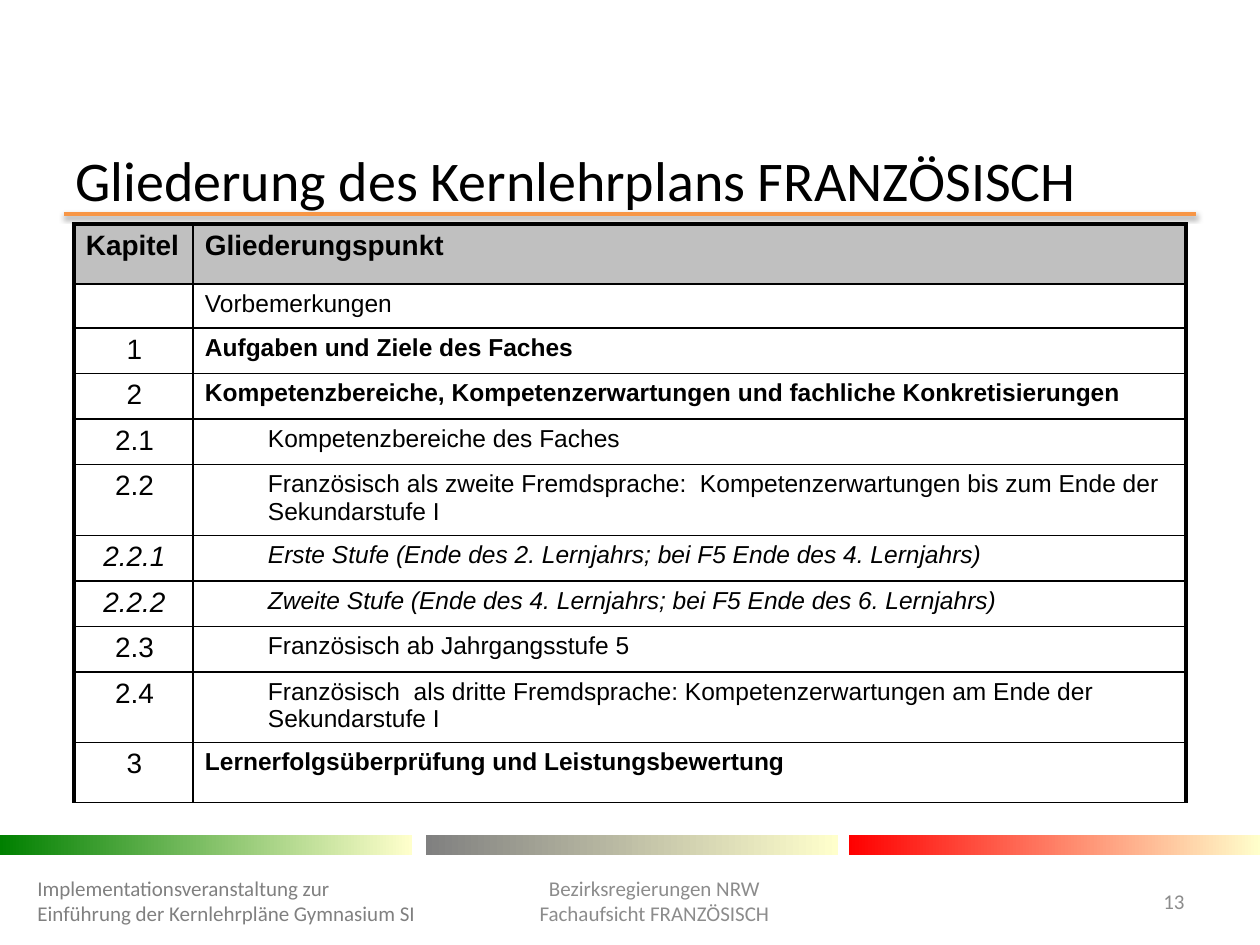
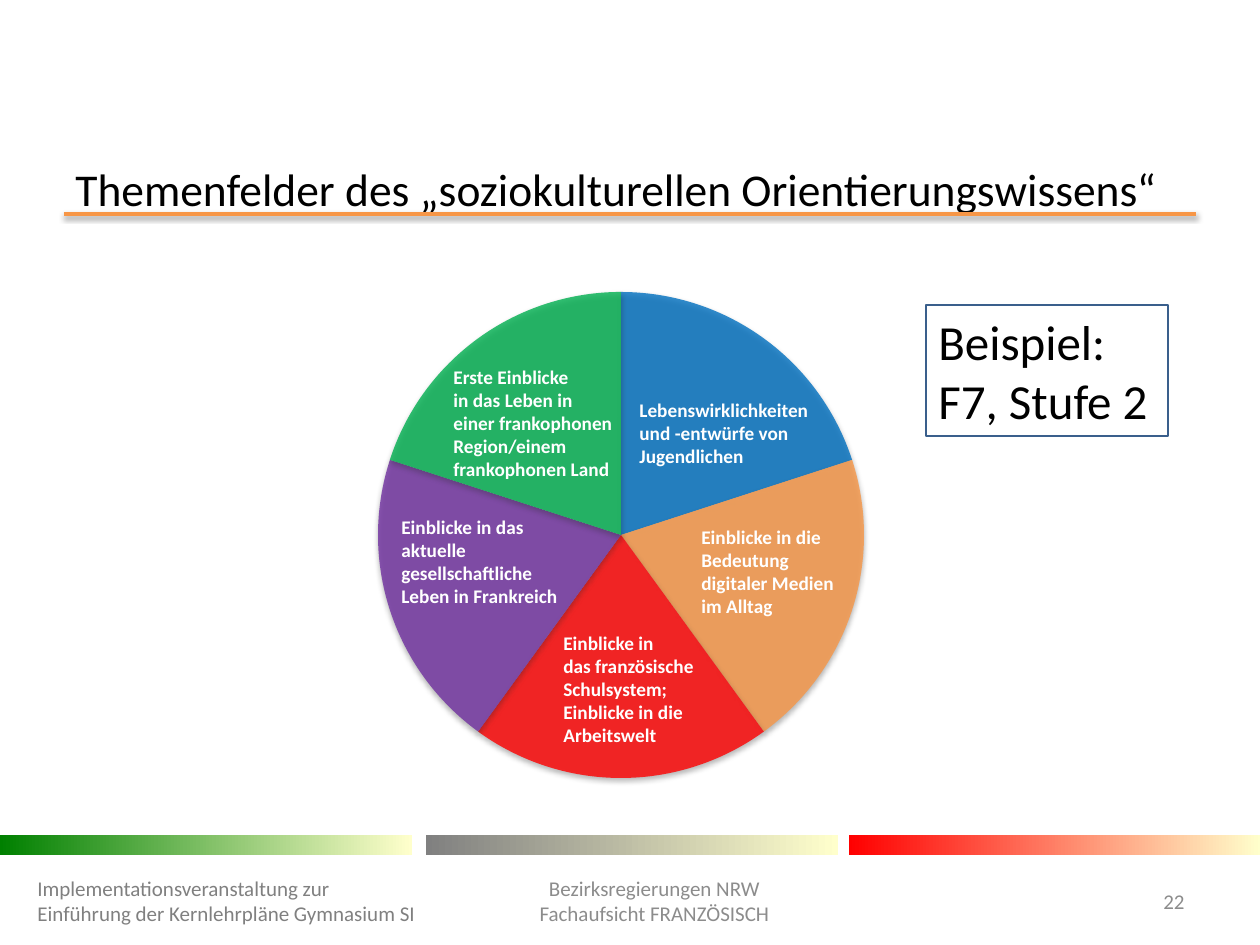
from lxml import etree
from pptx import Presentation
from pptx import util as u
from pptx.dml.color import RGBColor
from pptx.enum import shapes, text
from pptx.oxml.ns import qn

PX = 914400 / 126
COLORS = {
    "black": "000000", "white": "FFFFFF", "rule": "F79646", "header": "C0C0C0",
    "band_end": "FFFFCC", "green": "008000", "grey": "808080", "red": "FF0000",
    "footer": "8C8C8C", "frame": "3A5F8C", "blue_field": "0070C0",
    "orange_field": "F79646", "purple_field": "7030A0", "green_field": "00B050",
}
ALIGN = text.PP_ALIGN
ANCHOR = text.MSO_ANCHOR

BAND_STARTS = [(0, "green"), (426, "grey"), (849, "red")]
BAND_WIDTH = 412

CHAPTER = {"bold": True}
SECTION = {"indent": 63}
SUBSECTION = {"indent": 63, "italic": True}
OUTLINE = [
    ("Kapitel", "Gliederungspunkt", 60, CHAPTER),
    ("", "Vorbemerkungen", 44, {}),
    ("1", "Aufgaben und Ziele des Faches", 44, CHAPTER),
    ("2", "Kompetenzbereiche, Kompetenzerwartungen und fachliche Konkretisierungen",
     44, CHAPTER),
    ("2.1", "Kompetenzbereiche des Faches", 44, SECTION),
    ("2.2", "Französisch als zweite Fremdsprache:  Kompetenzerwartungen bis zum "
     "Ende der Sekundarstufe I", 68, SECTION),
    ("2.2.1", "Erste Stufe (Ende des 2. Lernjahrs; bei F5 Ende des 4. Lernjahrs)",
     44, SUBSECTION),
    ("2.2.2", "Zweite Stufe (Ende des 4. Lernjahrs; bei F5 Ende des 6. Lernjahrs)",
     44, SUBSECTION),
    ("2.3", "Französisch ab Jahrgangsstufe 5", 44, SECTION),
    ("2.4", "Französisch  als dritte Fremdsprache: Kompetenzerwartungen am Ende "
     "der Sekundarstufe I", 68, SECTION),
    ("3", "Lernerfolgsüberprüfung und Leistungsbewertung", 60, CHAPTER),
]

# Colour, label box relative to the circle, label paragraphs; clockwise from the top
TOPICS = [
    ("blue_field", (249, 100, 208, 83),
     ["Lebenswirklichkeiten", "und -entwürfe von Jugendlichen"]),
    ("orange_field", (311, 227, 162, 106),
     ["Einblicke in die", "Bedeutung", "digitaler Medien", "im Alltag"]),
    ("red", (173, 333, 238, 130),
     ["Einblicke in", "das französische", "Schulsystem;",
      "Einblicke in die Arbeitswelt"]),
    ("purple_field", (11, 217, 189, 106),
     ["Einblicke in das aktuelle gesellschaftliche Leben in Frankreich"]),
    ("green_field", (63, 67, 208, 130),
     ["Erste Einblicke", "in das Leben in", "einer frankophonen",
      "Region/einem frankophonen Land"]),
]


def px(length):
    return u.Emu(round(length * PX))


def place(box):
    return [px(length) for length in box]


def rgb(name):
    return RGBColor.from_string(COLORS[name])


def write(frame, lines, size, color, align=ALIGN.LEFT, font="Calibri", **style):
    """Fill a text frame with one paragraph per line."""
    frame.word_wrap = True
    for number, line in enumerate(lines):
        paragraph = frame.paragraphs[0] if number == 0 else frame.add_paragraph()
        paragraph.text = line
        paragraph.alignment = align
        for run in paragraph.runs:
            values = {"name": font, "size": u.Pt(size), **style}
            for attribute, value in values.items():
                setattr(run.font, attribute, value)
            run.font.color.rgb = rgb(color)


def add_text(slide, box, lines, size, color, anchor=ANCHOR.TOP, **style):
    frame = slide.shapes.add_textbox(*place(box)).text_frame
    frame.vertical_anchor = anchor
    write(frame, lines, size, color, **style)


def cast_shadow(shape, distance, opacity):
    """Give a shape a soft shadow straight below it."""
    effects = etree.SubElement(shape.element.spPr, qn("a:effectLst"))
    shadow = etree.SubElement(effects, qn("a:outerShdw"), blurRad="40000",
                              dist=str(distance), dir="5400000", rotWithShape="0")
    color = etree.SubElement(shadow, qn("a:srgbClr"), val=COLORS["black"])
    etree.SubElement(color, qn("a:alpha"), val=str(opacity * 1000))


def add_title(slide, title, top, size):
    add_text(slide, (63, top, 1134, 49), [title], size, "black", ANCHOR.MIDDLE)
    rule = slide.shapes.add_connector(
        shapes.MSO_CONNECTOR.STRAIGHT, px(64), px(214), px(1196), px(214))
    rule.line.color.rgb = rgb("rule")
    rule.line.width = u.Pt(2)
    cast_shadow(rule, 20000, 38)


def add_bands(slide, top, height):
    for left, color in BAND_STARTS:
        band = slide.shapes.add_shape(
            shapes.MSO_SHAPE.RECTANGLE, *place((left, top, BAND_WIDTH, height)))
        band.shadow.inherit = False
        band.line.fill.background()
        band.fill.gradient()
        band.fill.gradient_angle = 0
        for stop, name in zip(band.fill.gradient_stops, (color, "band_end")):
            stop.color.rgb = rgb(name)


def add_footer(slide, number):
    add_text(slide, (25, 876, 417, 50),
             ["Implementationsveranstaltung zur\vEinführung der Kernlehrpläne Gymnasium SI"],
             12, "grey", ANCHOR.MIDDLE)
    add_text(slide, (471, 856, 367, 89),
             ["Bezirksregierungen NRW", "Fachaufsicht FRANZÖSISCH"],
             12, "footer", ANCHOR.MIDDLE, align=ALIGN.CENTER)
    add_text(slide, (1116, 876, 81, 50), [str(number)],
             12, "footer", ANCHOR.MIDDLE, align=ALIGN.RIGHT)


def add_framed_slide(deck, title, title_top, title_size, number):
    slide = deck.slides.add_slide(deck.slide_layouts[6])
    add_bands(slide, 835, 20)
    add_title(slide, title, title_top, title_size)
    add_footer(slide, number)
    return slide


def set_borders(cell, widths):
    """Draw black cell borders; widths in points by side, in schema order."""
    for side, width in widths.items():
        border = etree.SubElement(cell._tc.get_or_add_tcPr(), qn(f"a:ln{side}"),
                                  w=str(u.Pt(width)))
        fill = etree.SubElement(border, qn("a:solidFill"))
        etree.SubElement(fill, qn("a:srgbClr"), val=COLORS["black"])


def format_cell(cell, is_header, is_chapter_column):
    margins = {"margin_left": 12, "margin_right": 10,
               "margin_top": 6, "margin_bottom": 6}
    for attribute, value in margins.items():
        setattr(cell, attribute, px(value))
    set_borders(cell, {"L": 2.25 if is_chapter_column else 1,
                       "R": 1 if is_chapter_column else 2.25,
                       "T": 2.25 if is_header else 1, "B": 1})
    if is_header:
        cell.fill.solid()
        cell.fill.fore_color.rgb = rgb("header")
    else:
        cell.fill.background()


def add_outline_table(slide, left, top, column_widths):
    height = sum(entry[2] for entry in OUTLINE)
    table = slide.shapes.add_table(
        len(OUTLINE), 2, *place((left, top, sum(column_widths), height))).table
    table.first_row = table.horz_banding = False
    for column, width in zip(table.columns, column_widths):
        column.width = px(width)
    for index, (chapter, topic, row_height, style) in enumerate(OUTLINE):
        is_header = index == 0
        table.rows[index].height = px(row_height)
        chapter_cell, topic_cell = table.cell(index, 0), table.cell(index, 1)
        format_cell(chapter_cell, is_header, True)
        format_cell(topic_cell, is_header, False)
        italic = style.get("italic", False)
        write(chapter_cell.text_frame, [chapter], 16, "black", font="Arial",
              align=ALIGN.LEFT if is_header else ALIGN.CENTER,
              bold=is_header, italic=italic)
        write(topic_cell.text_frame, [topic], 16 if is_header else 14, "black",
              font="Arial", bold=style.get("bold", False), italic=italic)
        if not chapter:
            etree.SubElement(chapter_cell.text_frame.paragraphs[0]._p,
                             qn("a:endParaRPr"), sz="1400")
        if "indent" in style:
            properties = topic_cell.text_frame.paragraphs[0]._p.get_or_add_pPr()
            properties.set("marL", str(px(style["indent"])))


def add_topic_wheel(slide, left, top, diameter):
    full_turn, start = 216, 162  # adjustment units: 0.6 per degree
    step = full_turn / len(TOPICS)
    for index, (color, _, _) in enumerate(TOPICS):
        sector = slide.shapes.add_shape(
            shapes.MSO_SHAPE.PIE, *place((left, top, diameter, diameter)))
        for edge in (0, 1):
            sector.adjustments[edge] = (start + (index + edge) * step) % full_turn
        sector.fill.solid()
        sector.fill.fore_color.rgb = rgb(color)
        fill_color = sector.element.spPr.find(f".//{qn('a:srgbClr')}")
        etree.SubElement(fill_color, qn("a:alpha"), val="80000")
        sector.line.fill.background()
        cast_shadow(sector, 23000, 35)
    for _, (x, y, width, height), lines in TOPICS:
        add_text(slide, (left + x, top + y, width, height), lines, 11, "white",
                 bold=True)


def add_example_box(slide, box):
    example = slide.shapes.add_shape(shapes.MSO_SHAPE.RECTANGLE, *place(box))
    example.shadow.inherit = False
    example.fill.background()
    example.line.color.rgb = rgb("frame")
    example.line.width = u.Pt(0.75)
    example.text_frame.vertical_anchor = ANCHOR.TOP
    write(example.text_frame, ["Beispiel:", "F7, Stufe 2"], 28, "black")


def main():
    deck = Presentation()
    deck.slide_width, deck.slide_height = u.Inches(10), u.Inches(7.5)

    outline = add_framed_slide(
        deck, "Gliederung des Kernlehrplans FRANZÖSISCH", 155, 32, 13)
    add_outline_table(outline, 74, 224, (119, 993))

    topics = add_framed_slide(
        deck, "Themenfelder des „soziokulturellen Orientierungswissens“", 164, 26, 22)
    add_topic_wheel(topics, 378, 292, 486)
    add_example_box(topics, (926, 305, 242, 131))

    deck.save("out.pptx")


if __name__ == "__main__":
    main()
